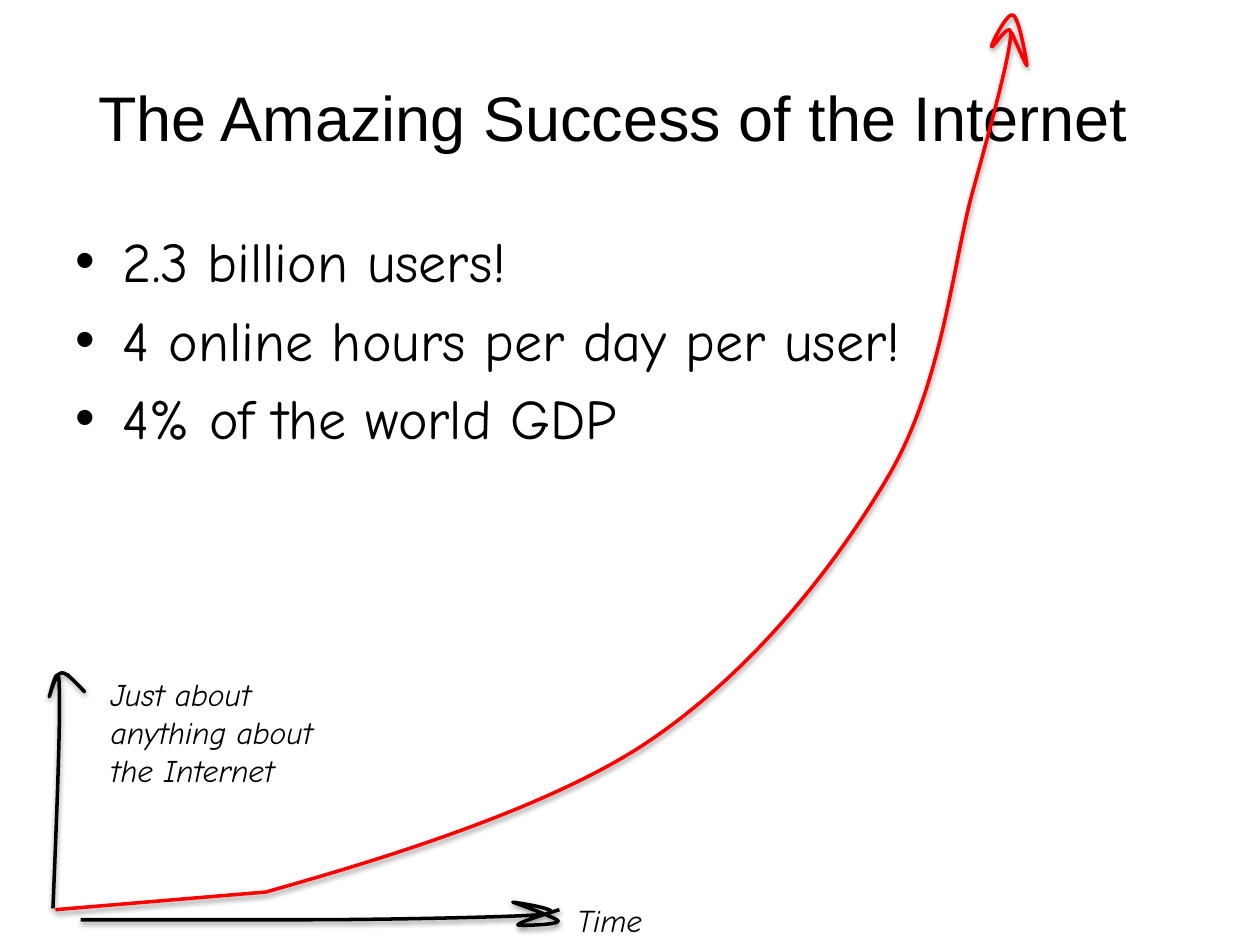
from lxml import etree
from pptx import Presentation
from pptx.dml.color import RGBColor
from pptx.enum.text import MSO_ANCHOR, MSO_AUTO_SIZE, PP_ALIGN
from pptx.oxml import parse_xml
from pptx.oxml.ns import nsdecls, qn
from pptx.util import Inches, Pt

BLACK = RGBColor(0, 0, 0)
RED = RGBColor(0xFF, 0, 0)
CENTER = PP_ALIGN.CENTER
MIDDLE = MSO_ANCHOR.MIDDLE
NO_AUTOFIT = MSO_AUTO_SIZE.NONE
GROW = MSO_AUTO_SIZE.SHAPE_TO_FIT_TEXT
TITLE_FONT = "Arial"
HAND_FONT = "Comic Neue"

BULLETS = [
    "2.3 billion users!",
    "4 online hours per day per user!",
    "4% of the world GDP",
]

# Strokes in inches: a start point, then segments.
# Two numbers are a line end; six are two control points and a curve end.
GROWTH_CURVE = [
    (0.44, 7.22),
    (2.11, 7.08),
    (2.89, 6.86, 4.32, 6.44, 5.14, 5.89),
    (5.96, 5.34, 6.62, 4.51, 7.05, 3.78),
    (7.48, 3.05, 7.56, 2.1, 7.72, 1.52),
    (7.88, 0.94, 8, 0.49, 8.02, 0.3),
    (8.05, 0.11, 7.87, 0.4, 7.87, 0.37),
    (7.87, 0.34, 8, 0.09, 8.04, 0.12),
    (8.09, 0.14, 8.15, 0.5, 8.15, 0.52),
    (8.15, 0.54, 8.03, 0.26, 8.03, 0.26),
]
VERTICAL_AXIS = [
    (0.42, 7.21),
    (0.45, 6.48, 0.48, 5.74, 0.47, 5.46),
    (0.47, 5.18, 0.39, 5.55, 0.39, 5.53),
    (0.4, 5.51, 0.44, 5.34, 0.49, 5.34),
    (0.53, 5.33, 0.66, 5.48, 0.67, 5.49),
    (0.68, 5.49, 0.53, 5.35, 0.53, 5.35),
]
TIME_AXIS = [
    (0.64, 7.3),
    (2.41, 7.3),
    (3.02, 7.3, 4.02, 7.28, 4.29, 7.26),
    (4.57, 7.23, 4.07, 7.16, 4.07, 7.16),
    (4.1, 7.17, 4.43, 7.29, 4.43, 7.31),
    (4.44, 7.34, 4.11, 7.35, 4.11, 7.34),
    (4.11, 7.32, 4.44, 7.22, 4.44, 7.22),
]


def place(shape, left, top, width, height):
    shape.left, shape.top = Inches(left), Inches(top)
    shape.width, shape.height = Inches(width), Inches(height)


def format_text(frame, font, size, italic=False):
    for para in frame.paragraphs:
        for span in para.runs:
            span.font.name = font
            span.font.size = Pt(size)
            span.font.italic = italic
            span.font.color.rgb = BLACK


def fill_title(title):
    place(title, -0.13, 0.3, 9.99, 1.25)
    frame = title.text_frame
    frame.text = "The Amazing Success of the Internet"
    frame.auto_size = NO_AUTOFIT
    frame.vertical_anchor = MIDDLE
    frame.paragraphs[0].alignment = CENTER
    format_text(frame, TITLE_FONT, 36)


def fill_bullets(body):
    place(body, 0.5, 1.75, 9.36, 4.95)
    frame = body.text_frame
    frame.text = "\n".join(BULLETS)
    frame.auto_size = NO_AUTOFIT
    format_text(frame, HAND_FONT, 32)


def add_label(page, text, left, top, width, height, wrap):
    box = page.shapes.add_textbox(
        Inches(left), Inches(top), Inches(width), Inches(height))
    frame = box.text_frame
    frame.text = text
    frame.word_wrap = wrap
    frame.auto_size = GROW
    format_text(frame, HAND_FONT, 18, italic=True)


def bend_segments(shape, segments):
    """Turn the straight segments that have control points into Bezier curves."""
    lines = list(shape.element.spPr.iter(qn("a:lnTo")))
    for line, segment in zip(lines, segments):
        if len(segment) == 2:
            continue
        curve = etree.Element(qn("a:cubicBezTo"))
        for x, y in zip(segment[::2], segment[1::2]):
            etree.SubElement(curve, qn("a:pt"),
                             x=str(Inches(x) - shape.left),
                             y=str(Inches(y) - shape.top))
        line.getparent().replace(line, curve)


def add_soft_shadow(shape):
    effects = parse_xml(f"<a:effectLst {nsdecls('a')}/>")
    shadow = etree.SubElement(
        effects, qn("a:outerShdw"), blurRad=str(Pt(3.1)),
        dist=str(Pt(1.6)), dir="5400000", rotWithShape="0")
    color = etree.SubElement(shadow, qn("a:srgbClr"), val=str(BLACK))
    etree.SubElement(color, qn("a:alpha"), val="38000")
    shape.element.spPr.append(effects)


def add_stroke(page, stroke, color):
    ends = [(Inches(part[-2]), Inches(part[-1])) for part in stroke]
    builder = page.shapes.build_freeform(*ends[0])
    builder.add_line_segments(ends[1:], close=False)
    shape = builder.convert_to_shape()
    bend_segments(shape, stroke[1:])
    shape.fill.background()
    shape.line.color.rgb = color
    shape.line.width = Pt(2)
    add_soft_shadow(shape)


def main():
    deck = Presentation()
    deck.slide_width, deck.slide_height = Inches(10), Inches(7.5)
    page = deck.slides.add_slide(deck.slide_layouts[1])
    fill_title(page.shapes.title)
    fill_bullets(page.placeholders[1])
    add_stroke(page, GROWTH_CURVE, RED)
    add_label(page, "Time", 4.48, 7.1, 0.98, 0.4, wrap=False)
    add_label(page, "Just about anything about\vthe Internet",
              0.78, 5.31, 2.26, 1.01, wrap=True)
    add_stroke(page, VERTICAL_AXIS, BLACK)
    add_stroke(page, TIME_AXIS, BLACK)
    deck.save("out.pptx")


if __name__ == "__main__":
    main()
